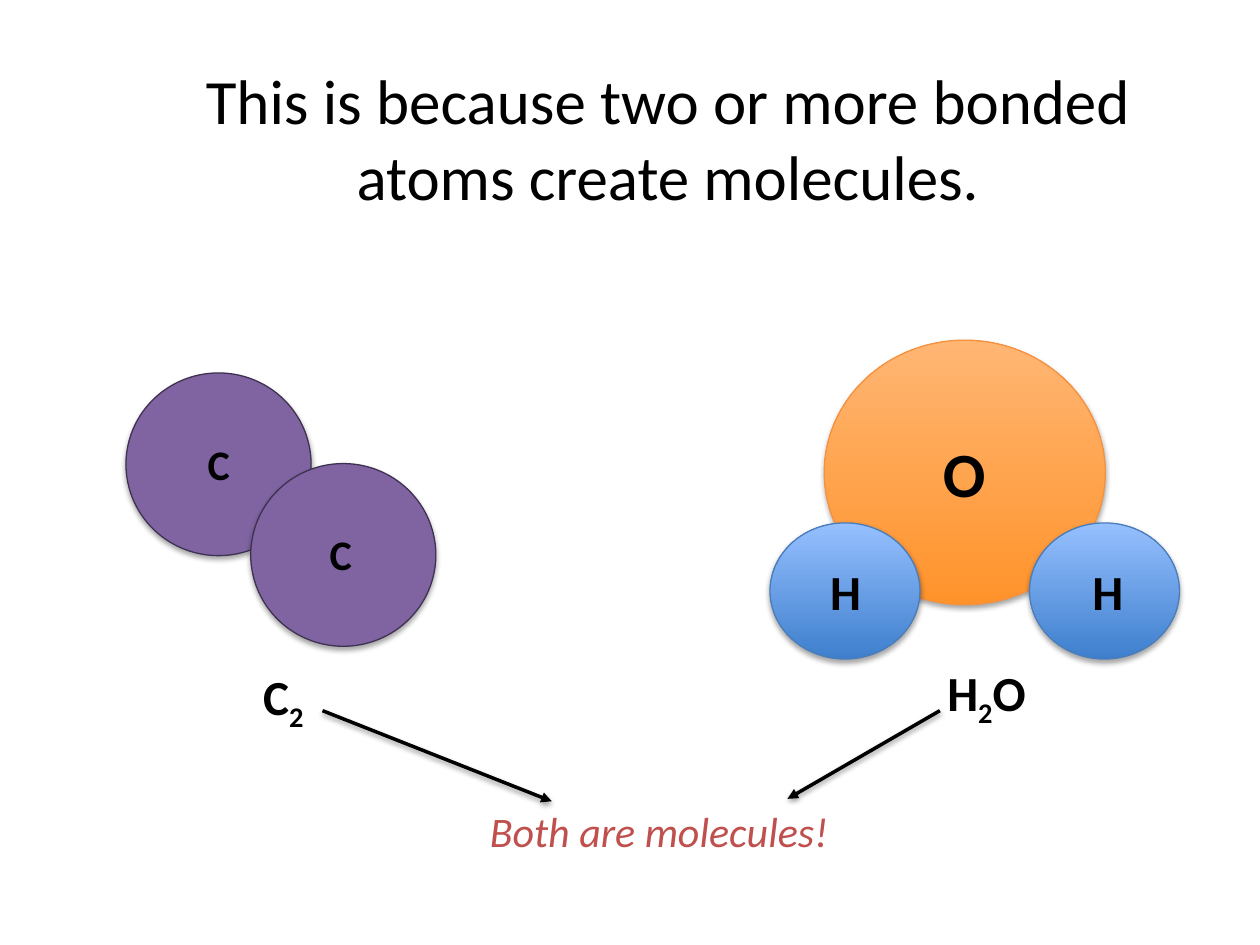
import lxml.etree
import pptx
import pptx.dml.color
import pptx.enum.shapes
import pptx.enum.text
import pptx.oxml.ns
import pptx.util

Pt = pptx.util.Pt
qn = pptx.oxml.ns.qn
ALIGN = pptx.enum.text.PP_ALIGN
BLACK = "000000"
ORANGE = {"colours": ("FF932B", "FFB673"), "outline": "F5913F"}
BLUE = {"colours": ("3E7FCD", "96C0FF"), "outline": "4A7DBA"}
PURPLE = {"colours": ("8064A2",), "outline": "3F3151"}


def colour(value):
    return pptx.dml.color.RGBColor.from_string(value)


def add_shadow(shape, distance, opacity):
    effects = lxml.etree.SubElement(shape._element.spPr, qn("a:effectLst"))
    shadow = lxml.etree.SubElement(
        effects, qn("a:outerShdw"), blurRad=str(Pt(3.1)), dist=str(Pt(distance)),
        dir="5400000", rotWithShape="0")
    tint = lxml.etree.SubElement(shadow, qn("a:srgbClr"), val=BLACK)
    lxml.etree.SubElement(tint, qn("a:alpha"), val=str(opacity * 1000))


def add_text(shapes, text, left, top, width, height, size, fill=BLACK,
             bold=False, italic=False, align=ALIGN.CENTER, wrap=True):
    """Add a text box; digits become subscripts when the text is a bold formula."""
    box = shapes.add_textbox(Pt(left), Pt(top), Pt(width), Pt(height))
    frame = box.text_frame
    frame.word_wrap = wrap
    frame.auto_size = pptx.enum.text.MSO_AUTO_SIZE.SHAPE_TO_FIT_TEXT
    para = frame.paragraphs[0]
    para.alignment = align
    for part in text if bold else [text]:
        span = para.add_run()
        span.text = part
        span.font.name = "Calibri"
        span.font.size = Pt(size)
        span.font.bold = bold
        span.font.italic = italic
        span.font.color.rgb = colour(fill)
        if part.isdigit():
            span.font._element.set("baseline", "-25000")


def add_atom(shapes, left, top, width, height, colours, outline):
    """Add a shaded circle; two colours run from bottom to top."""
    atom = shapes.add_shape(pptx.enum.shapes.MSO_SHAPE.OVAL,
                            Pt(left), Pt(top), Pt(width), Pt(height))
    if len(colours) == 2:
        atom.fill.gradient()
        atom.fill.gradient_angle = 90
        for stop, value in zip(atom.fill.gradient_stops, colours):
            stop.color.rgb = colour(value)
    else:
        atom.fill.solid()
        atom.fill.fore_color.rgb = colour(colours[0])
    atom.line.color.rgb = colour(outline)
    atom.line.width = Pt(0.75)
    add_shadow(atom, 1.8, 35)


def add_arrow(shapes, start, end):
    arrow = shapes.add_connector(pptx.enum.shapes.MSO_CONNECTOR.STRAIGHT,
                                 *(Pt(value) for value in (*start, *end)))
    arrow.line.color.rgb = colour(BLACK)
    arrow.line.width = Pt(2)
    lxml.etree.SubElement(arrow.line._get_or_add_ln(), qn("a:tailEnd"), type="triangle")
    add_shadow(arrow, 1.6, 38)


def add_water(shapes, left, top):
    add_atom(shapes, left + 31, top, 160.6, 151.2, **ORANGE)
    for offset in (0, 148.3):
        add_atom(shapes, left + offset, top + 104.4, 85.7, 77.8, **BLUE)
    add_text(shapes, "O", left + 74.9, top + 50.4, 72, 51, 36, bold=True)
    for offset in (7.2, 157):
        add_text(shapes, "H", left + offset, top + 123.1, 72, 41, 28, bold=True)
    add_text(shapes, "H2O", left + 94.3, top + 180.7, 62.6, 41, 28, bold=True,
             align=ALIGN.LEFT, wrap=False)


def add_carbon(shapes, left, top):
    atoms = shapes.add_group_shape().shapes
    for step in range(2):
        add_atom(atoms, left + step * 71.3, top + step * 51.8, 105.8, 104.4, **PURPLE)
    for step in range(2):
        add_text(atoms, "C", left + 34.6 + step * 69.8, top + 33.8 + step * 51.8,
                 36.7, 36, 24, bold=True)
    add_text(shapes, "C2", left + 71.3, top + 164.2, 39.6, 41, 28, bold=True,
             align=ALIGN.LEFT, wrap=False)


def add_conclusion(shapes, left, top, width):
    add_arrow(shapes, (left - 64.8, top - 50.4), (left + 66.2, top + 1.4))
    add_arrow(shapes, (left + 288, top - 50.4), (left + 200.9, top))
    add_text(shapes, "Both are molecules!", left, top, width, 36, 24,
             fill="C0504D", italic=True)


def main():
    deck = pptx.Presentation()
    deck.slide_width, deck.slide_height = Pt(720), Pt(540)
    page = deck.slides.add_slide(deck.slide_layouts[6])
    add_water(page.shapes, 440, 194.4)
    add_carbon(page.shapes, 72, 213.1)
    add_text(page.shapes, "This is because two or more bonded atoms create molecules.",
             67, 31.7, 629.3, 94.3, 36)
    add_conclusion(page.shapes, 249.1, 456.5, 254.9)
    deck.save("out.pptx")


if __name__ == "__main__":
    main()
